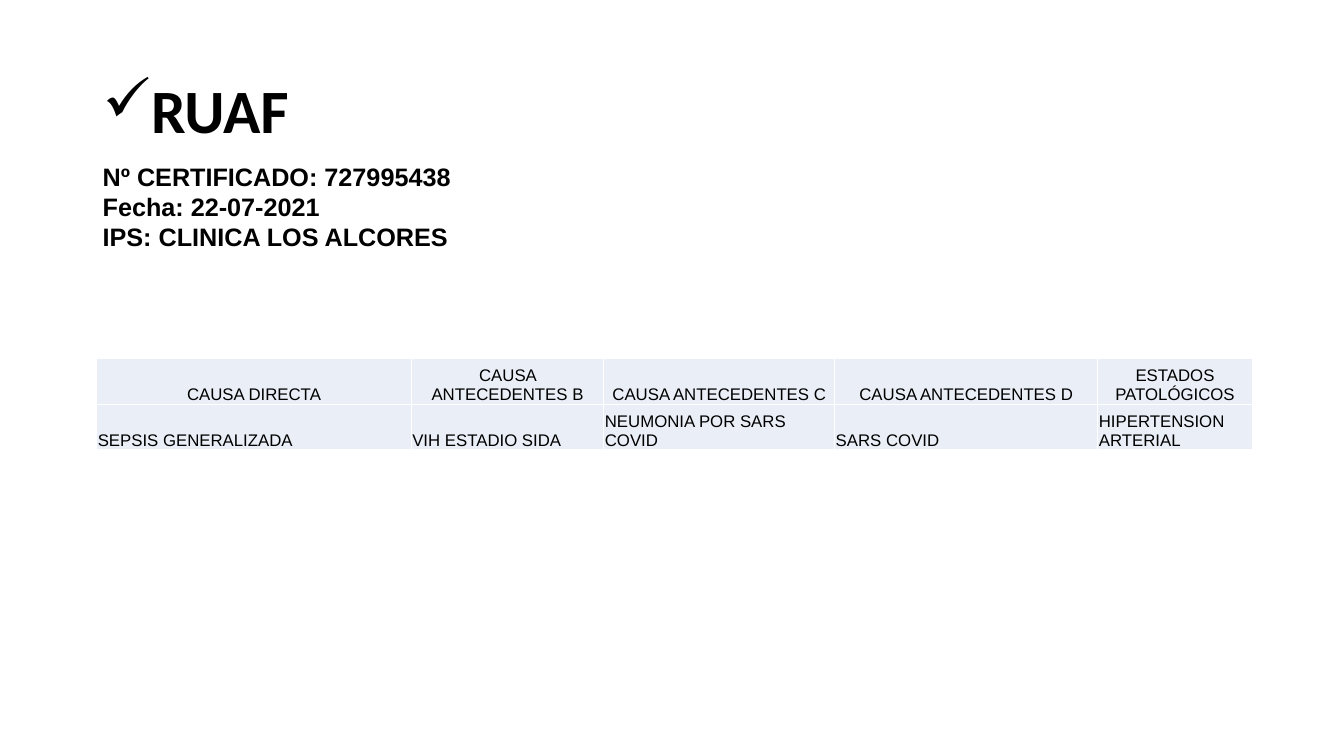
"""Builds the RUAF certificate slide with its table of causes of death."""
from lxml.etree import SubElement
from pptx import Presentation
from pptx.dml.color import RGBColor
from pptx.enum.text import MSO_ANCHOR, PP_ALIGN
from pptx.oxml.ns import qn
from pptx.util import Inches, Pt

BLACK = RGBColor(0x00, 0x00, 0x00)
WHITE = RGBColor(0xFF, 0xFF, 0xFF)
PALE_BLUE = RGBColor(0xEA, 0xEF, 0xF7)

CERTIFICATE = [
    "Nº CERTIFICADO: 727995438",
    "Fecha: 22-07-2021",
    "IPS: CLINICA LOS ALCORES",
]
COLUMN_WIDTHS = [3.12, 1.91, 2.29, 2.61, 1.53]
CAUSES = [
    ["CAUSA DIRECTA", "CAUSA ANTECEDENTES B", "CAUSA ANTECEDENTES C",
     "CAUSA ANTECEDENTES D", "ESTADOS PATOLÓGICOS"],
    ["SEPSIS GENERALIZADA", "VIH ESTADIO SIDA", "NEUMONIA POR SARS COVID",
     "SARS COVID", "HIPERTENSION ARTERIAL"],
]


def write(p, text, size=12, font="Arial", color=BLACK, bold=False,
          align=PP_ALIGN.LEFT, spacing=None):
    p.alignment = align
    if spacing:
        p.line_spacing = spacing
    r = p.add_run()
    r.text = text
    r.font.size = Pt(size)
    r.font.name = font
    r.font.bold = bold
    r.font.color.rgb = color


class CertificateSlide:
    def __init__(self, prs):
        self.s = prs.slides.add_slide(prs.slide_layouts[6])
        self.fill = PALE_BLUE
        self.border = WHITE

    def text(self, box, lines, anchor=MSO_ANCHOR.TOP, bullet=None, **style):
        sp = self.s.shapes.add_textbox(*map(Inches, box))
        tf = sp.text_frame
        tf.word_wrap = True
        tf.vertical_anchor = anchor
        for i, line in enumerate(lines):
            p = tf.add_paragraph() if i else tf.paragraphs[0]
            write(p, line, **style)
            if bullet:
                self.add_bullet(p, bullet)

    def add_bullet(self, p, char, indent=0.31):
        pPr = p._p.get_or_add_pPr()
        pPr.set("marL", str(Inches(indent)))
        pPr.set("indent", str(-Inches(indent)))
        SubElement(pPr, qn("a:buChar"), char=char)

    def add_borders(self, cell):
        tcPr = cell._tc.get_or_add_tcPr()
        for side in ("lnL", "lnR", "lnT", "lnB"):
            ln = SubElement(tcPr, qn(f"a:{side}"), w=str(Pt(1)))
            fill = SubElement(ln, qn("a:solidFill"))
            SubElement(fill, qn("a:srgbClr"), val=str(self.border))

    def table(self, left, top, widths, row_height, rows):
        height = row_height * len(rows)
        frame = self.s.shapes.add_table(
            len(rows), len(widths), Inches(left), Inches(top),
            Inches(sum(widths)), Inches(height))
        table = frame.table
        for column, width in zip(table.columns, widths):
            column.width = Inches(width)
        for i, texts in enumerate(rows):
            table.rows[i].height = Inches(row_height)
            align = PP_ALIGN.LEFT if i else PP_ALIGN.CENTER
            for j, text in enumerate(texts):
                cell = table.cell(i, j)
                cell.margin_left = cell.margin_right = Inches(0.01)
                cell.margin_top = Inches(0.01)
                cell.margin_bottom = 0
                cell.vertical_anchor = MSO_ANCHOR.BOTTOM
                self.add_borders(cell)
                cell.fill.solid()
                cell.fill.fore_color.rgb = self.fill
                write(cell.text_frame.paragraphs[0], text, align=align)


def main():
    prs = Presentation()
    prs.slide_width = Inches(13.33)
    prs.slide_height = Inches(7.5)
    slide = CertificateSlide(prs)
    slide.text((0.92, 0.4, 11.5, 1.45), ["RUAF"], anchor=MSO_ANCHOR.MIDDLE,
               bullet="✓", size=44, font="Calibri", bold=True, spacing=0.9)
    slide.text((0.92, 1.55, 9.5, 1.01), CERTIFICATE, size=18, bold=True)
    slide.table(0.96, 3.56, COLUMN_WIDTHS, 0.45, CAUSES)
    prs.save("out.pptx")


if __name__ == "__main__":
    main()
